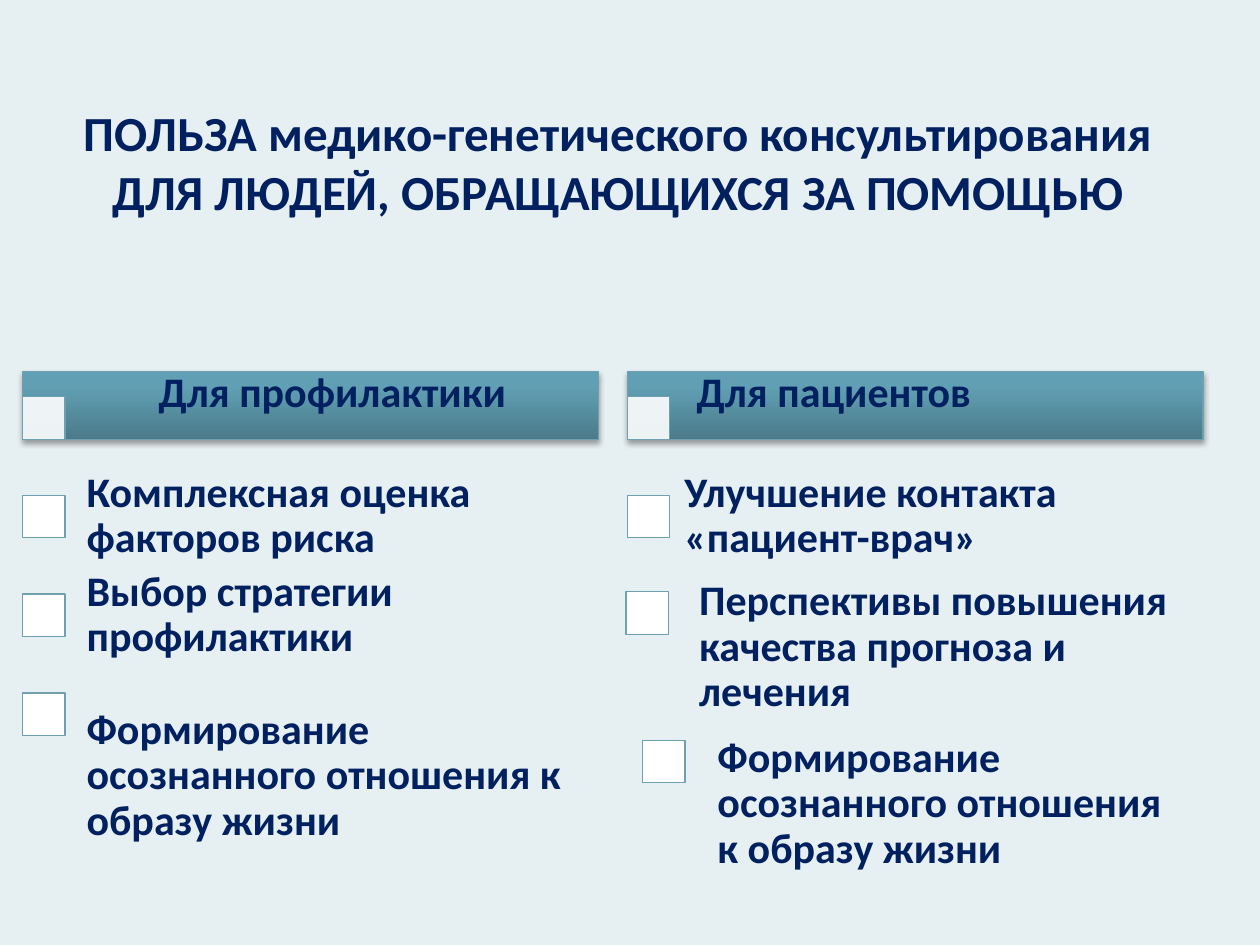
"""Build the slide on the benefits of genetic counselling."""
from dataclasses import dataclass

from lxml import etree
from pptx import Presentation
from pptx.dml.color import RGBColor
from pptx.enum.shapes import MSO_SHAPE
from pptx.enum.text import MSO_ANCHOR, PP_ALIGN
from pptx.oxml import parse_xml
from pptx.oxml.ns import nsdecls, qn
from pptx.util import Pt

RECT = MSO_SHAPE.RECTANGLE
TOP, MIDDLE = MSO_ANCHOR.TOP, MSO_ANCHOR.MIDDLE
LEFT, CENTER = PP_ALIGN.LEFT, PP_ALIGN.CENTER


@dataclass(frozen=True)
class Theme:
    """Hold the colours and type sizes."""
    back: str = "E6EFF1"
    ink: str = "002060"
    edge: str = "6EA0B0"
    dark: str = "4B7B8B"
    light: str = "61A0B4"
    white: str = "FFFFFF"
    font: str = "Calibri"
    head: float = 28
    body: float = 24


def put(target, **values):
    """Set each value on the target."""
    for name, value in values.items():
        setattr(target, name, value)


def rgb(code):
    """Turn a hex code into a colour."""
    return RGBColor.from_string(code)


class Board:
    """Draw styled parts on one slide."""

    def __init__(self, slide, theme):
        """Keep the slide and theme and paint the background."""
        self.slide, self.theme = slide, theme
        fill = slide.background.fill
        fill.solid()
        fill.fore_color.rgb = rgb(theme.back)

    def rect(self, *spot):
        """Add an outlined rectangle without a shadow."""
        shape = self.slide.shapes.add_shape(RECT, *map(Pt, spot))
        shape.shadow.inherit = False
        shape.line.color.rgb = rgb(self.theme.edge)
        shape.line.width = Pt(0.75)
        return shape

    def banner(self, *spot):
        """Add a shaded bar with a soft shadow."""
        shape = self.rect(*spot)
        shape.fill.gradient()
        shape.fill.gradient_angle = 90
        looks = ((0, self.theme.dark), (0.8, self.theme.light))
        for stop, (place, code) in zip(shape.fill.gradient_stops, looks):
            stop.position = place
            stop.color.rgb = rgb(code)
        glow = parse_xml(
            f'<a:outerShdw {nsdecls("a")} blurRad="{Pt(3.1)}" dist="{Pt(1.8)}" '
            'dir="5400000" rotWithShape="0"><a:srgbClr val="000000">'
            '<a:alpha val="35000"/></a:srgbClr></a:outerShdw>')
        shape.element.spPr.find(qn("a:effectLst")).append(glow)

    def check(self, left, top, alpha=100):
        """Add a white square, partly clear if asked."""
        shape = self.rect(left, top, 24.3, 24.3)
        shape.fill.solid()
        shape.fill.fore_color.rgb = rgb(self.theme.white)
        if alpha < 100:
            tint = shape.element.spPr.find(qn("a:solidFill"))[0]
            etree.SubElement(tint, qn("a:alpha"), val=str(alpha * 1000))

    def text(self, words, spot, size, frame=None, para=None):
        """Add a bold text box with frame and paragraph formats."""
        box = self.slide.shapes.add_textbox(*map(Pt, spot)).text_frame
        put(box, word_wrap=True, **(frame or {}))
        line = box.paragraphs[0]
        put(line, **(para or {}))
        run = line.add_run()
        run.text = words
        put(run.font, name=self.theme.font, size=Pt(size), bold=True)
        run.font.color.rgb = rgb(self.theme.ink)

    def item(self, words, left, mid, width, rows):
        """Add a list entry centred on a height."""
        high = rows * 27
        frame = dict(vertical_anchor=MIDDLE, margin_left=0, margin_right=0,
                     margin_top=0, margin_bottom=0)
        self.text(words, (left, mid - high / 2, width, high),
                  self.theme.body, frame, dict(alignment=LEFT, line_spacing=0.9))


HABIT = "Формирование осознанного отношения к образу жизни"
COLUMNS = (
    (12.9, "Для профилактики", 83.5, (
        ((12.9, 283), "Комплексная оценка факторов риска", 49.5, 295, 279, 2),
        ((12.9, 339.5), "Выбор стратегии профилактики", 49.5, 351.5, 279, 2),
        ((12.9, 396), HABIT, 49.5, 443.5, 279, 3))),
    (358.5, "Для пациентов", 391, (
        ((358.5, 283), "Улучшение контакта «пациент-врач»", 391, 295, 287, 2),
        ((357.8, 338.2), "Перспективы повышения качества прогноза и лечения",
         399.5, 370, 279, 3),
        ((367.2, 423), HABIT, 410, 459.5, 268.5, 3))),
)


def main():
    """Build and save the slide."""
    deck = Presentation()
    put(deck, slide_width=Pt(720), slide_height=Pt(540))
    theme = Theme()
    board = Board(deck.slides.add_slide(deck.slide_layouts[6]), theme)
    board.text("ПОЛЬЗА медико-генетического консультирования "
               "ДЛЯ ЛЮДЕЙ, ОБРАЩАЮЩИХСЯ ЗА ПОМОЩЬЮ",
               (12.9, 21, 680, 142.5), theme.head,
               dict(vertical_anchor=MIDDLE), dict(alignment=CENTER))
    for left, label, start, items in COLUMNS:
        board.banner(left, 212.3, 329, 38.7)
        board.check(left, 226.7, 90)
        board.text(label, (start, 205.2, 248, 36), theme.body,
                   dict(vertical_anchor=TOP), dict(alignment=LEFT))
        for spot, *entry in items:
            board.check(*spot)
            board.item(*entry)
    deck.save("out.pptx")


if __name__ == "__main__":
    main()
